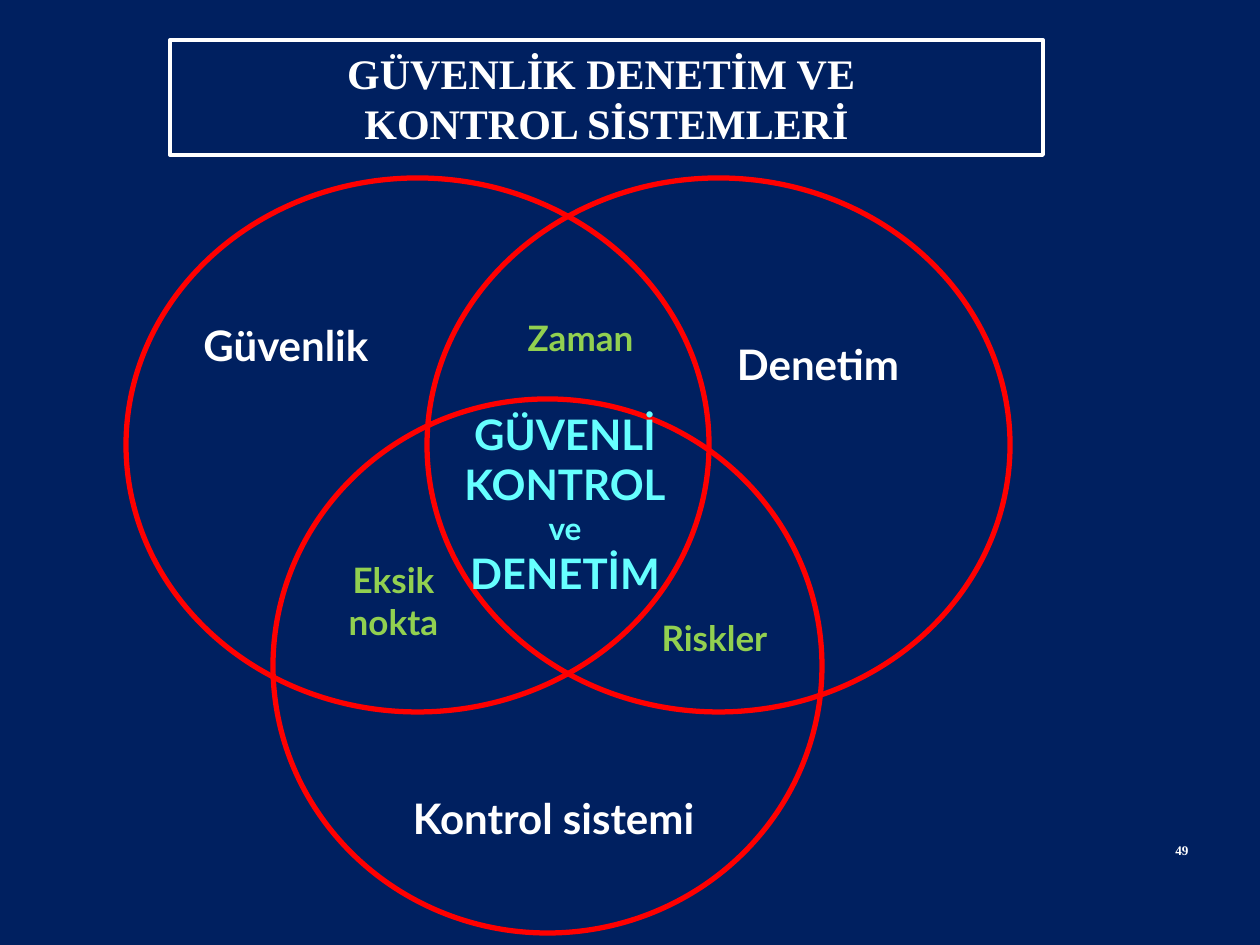
from pptx import Presentation
from pptx.dml.color import RGBColor
from pptx.enum.shapes import MSO_SHAPE
from pptx.enum.text import MSO_ANCHOR, PP_ALIGN
from pptx.util import Emu, Pt

PIXELS_PER_INCH = 126
NAVY = RGBColor(0x00, 0x20, 0x60)
WHITE = RGBColor(0xFF, 0xFF, 0xFF)
RED = RGBColor(0xFF, 0x00, 0x00)
GREEN = RGBColor(0x92, 0xD0, 0x50)
CYAN = RGBColor(0x66, 0xFF, 0xFF)
LABEL_FONT = "Lato"
TITLE_FONT = "Times New Roman"

CIRCLES = [
    (126, 178, 583, 534),
    (427, 178, 583, 534),
    (273, 399, 549, 534),
]
SET_LABELS = [
    ("Güvenlik", (184, 305, 204, 79)),
    ("Denetim", (721, 324, 194, 79)),
    ("Kontrol sistemi", (388, 778, 331, 79)),
]
OVERLAP_LABELS = [
    ("Zaman", (496, 298, 169, 79)),
    ("Riskler", (630, 581, 169, 113)),
    ("Eksik nokta", (309, 544, 169, 113)),
]
CENTRE_LINES = [("GÜVENLİ KONTROL", 24), ("ve", 18), ("DENETİM", 24)]


def px(length):
    return Emu(round(length * 914400 / PIXELS_PER_INCH))


def write_lines(shape, lines, color, font=LABEL_FONT, align=PP_ALIGN.CENTER):
    """Fill a shape with bold paragraphs given as (text, size) pairs."""
    frame = shape.text_frame
    frame.word_wrap = True
    frame.vertical_anchor = MSO_ANCHOR.MIDDLE
    for index, (text, size) in enumerate(lines):
        paragraph = frame.add_paragraph() if index else frame.paragraphs[0]
        paragraph.alignment = align
        run = paragraph.add_run()
        run.text = text
        run.font.name = font
        run.font.size = Pt(size)
        run.font.bold = True
        run.font.color.rgb = color


def add_label(slide, box, lines, color, **text_format):
    shape = slide.shapes.add_textbox(*map(px, box))
    write_lines(shape, lines, color, **text_format)


def format_title(slide):
    title = slide.shapes.title
    title.left, title.top, title.width, title.height = map(px, (170, 40, 873, 115))
    title.line.color.rgb = WHITE
    title.line.width = Pt(2.25)
    lines = [("GÜVENLİK DENETİM VE ", 24), ("KONTROL SİSTEMLERİ", 24)]
    write_lines(title, lines, WHITE, font=TITLE_FONT)


def add_circle(slide, box):
    circle = slide.shapes.add_shape(MSO_SHAPE.OVAL, *map(px, box))
    circle.shadow.inherit = False
    circle.fill.background()
    circle.line.color.rgb = RED
    circle.line.width = Pt(3)


def main():
    presentation = Presentation()
    presentation.slide_width = px(1260)
    presentation.slide_height = px(945)
    slide = presentation.slides.add_slide(presentation.slide_layouts[5])
    slide.background.fill.solid()
    slide.background.fill.fore_color.rgb = NAVY

    format_title(slide)
    add_label(slide, (1126, 825, 75, 50), [("49", 7.5)], WHITE,
              font=TITLE_FONT, align=PP_ALIGN.RIGHT)
    for box in CIRCLES:
        add_circle(slide, box)
    for text, box in SET_LABELS:
        add_label(slide, box, [(text, 24)], WHITE)
    for text, box in OVERLAP_LABELS:
        add_label(slide, box, [(text, 20)], GREEN)
    add_label(slide, (441, 413, 248, 180), CENTRE_LINES, CYAN)

    presentation.save("out.pptx")


if __name__ == "__main__":
    main()
